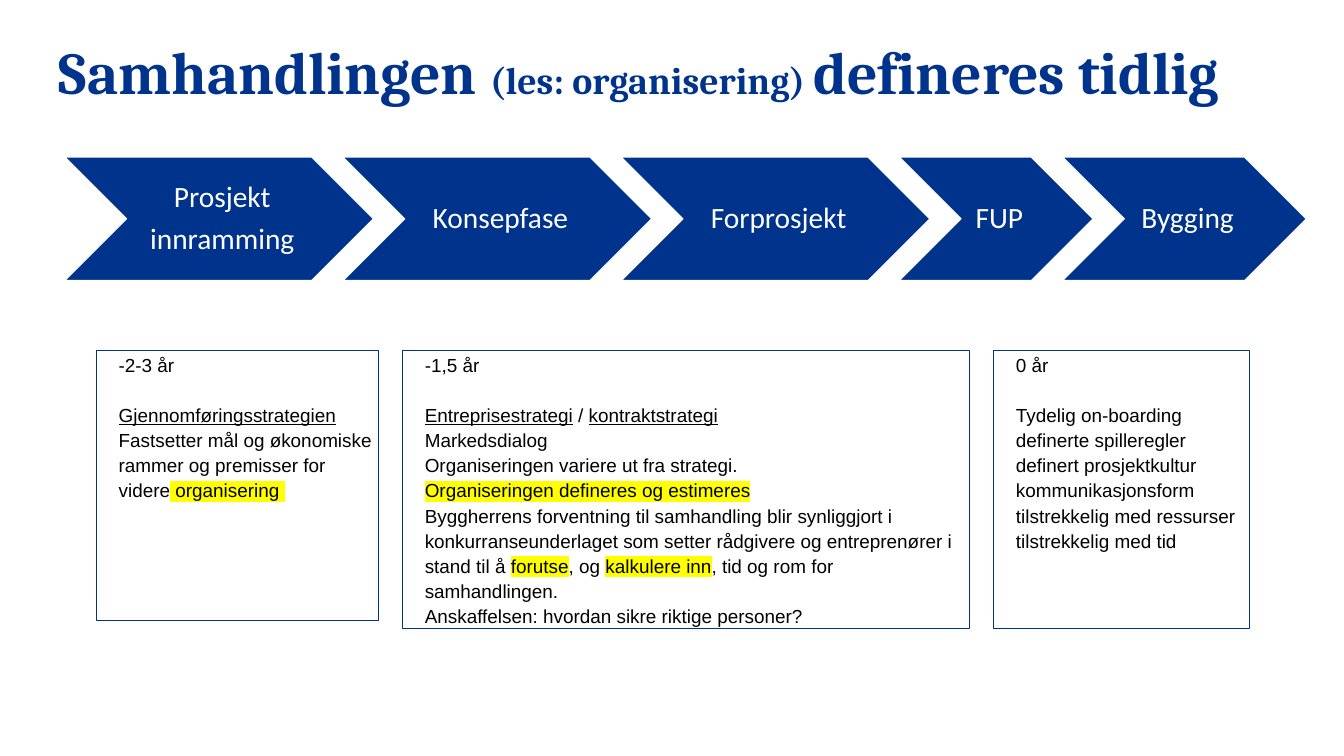
from lxml.etree import SubElement
from pptx import Presentation
from pptx.dml.color import RGBColor
from pptx.enum.shapes import MSO_SHAPE
from pptx.enum.text import MSO_ANCHOR, PP_ALIGN
from pptx.oxml.ns import qn
from pptx.util import Inches, Pt

BLUE, WHITE, BLACK, YELLOW = "00338C", "FFFFFF", "000000", "FFFF00"

TITLE = [("Samhandlingen ", 56.7), ("(les: organisering) ", 36), ("defineres tidlig", 56.7)]

# Phase label lines, chevron width
PHASES = [
    (["Prosjekt", "innramming"], 4.08),
    (["Konsepfase"], 4.08),
    (["Forprosjekt"], 4.08),
    (["FUP"], 2.56),
    (["Bygging"], 3.22),
]
PHASE_LEFT, PHASE_TOP, PHASE_HEIGHT, OVERLAP = 0.86, 2.08, 1.63, 0.4

# Left, width, height, time, paragraphs; a run is (text, style), style "u" underlined, "h" highlighted
BOX_TOP = 4.64
BOXES = [
    (1.27, 3.74, 3.57, "-2-3 år", [
        [("Gjennomføringsstrategien", "u")],
        [("Fastsetter mål og økonomiske rammer og premisser for videre", ""),
         (" organisering ", "h")],
    ]),
    (5.32, 7.5, 3.67, "-1,5 år", [
        [("Entreprisestrategi", "u"), (" / ", ""), ("kontraktstrategi", "u")],
        [("Markedsdialog", "")],
        [("Organiseringen variere ut fra strategi.", "")],
        [("Organiseringen defineres og estimeres", "h")],
        [("Byggherrens forventning til samhandling blir synliggjort i "
          "konkurranseunderlaget som setter rådgivere og entreprenører i stand til å ", ""),
         ("forutse", "h"), (", og ", ""), ("kalkulere inn", "h"),
         (", tid og rom for samhandlingen.", "")],
        [("Anskaffelsen: hvordan sikre riktige personer?", "")],
    ]),
    (13.14, 3.39, 3.67, "0 år", [
        [("Tydelig on-boarding", "")],
        [("definerte spilleregler", "")],
        [("definert prosjektkultur", "")],
        [("kommunikasjonsform", "")],
        [("tilstrekkelig med ressurser", "")],
        [("tilstrekkelig med tid", "")],
    ]),
]


def rgb(color):
    return RGBColor.from_string(color)


def set_font(p, name, size, color, bold=False):
    p.font.name, p.font.size, p.font.bold = name, Pt(size), bold
    p.font.color.rgb = rgb(color)


def set_frame(s, anchor, margins=(0, 0, 0, 0)):
    tf = s.text_frame
    tf.word_wrap = True
    tf.vertical_anchor = anchor
    tf.margin_left, tf.margin_top, tf.margin_right, tf.margin_bottom = map(Inches, margins)
    return tf


def paragraphs(tf, items):
    """Yield a paragraph of the frame for each item."""
    for i, item in enumerate(items):
        yield (tf.add_paragraph() if i else tf.paragraphs[0]), item


def add_outlined(slide, kind, box, fill, line, width):
    s = slide.shapes.add_shape(kind, *map(Inches, box))
    s.shadow.inherit = False
    if fill:
        s.fill.solid()
        s.fill.fore_color.rgb = rgb(fill)
    else:
        s.fill.background()
    s.line.color.rgb = rgb(line)
    s.line.width = Pt(width)
    return s


def add_title(slide):
    s = slide.shapes.add_textbox(Inches(0.78), Inches(0.4), Inches(15.76), Inches(1.06))
    p = set_frame(s, MSO_ANCHOR.MIDDLE).paragraphs[0]
    set_font(p, "Cambria", 56.7, BLUE, bold=True)
    for text, size in TITLE:
        r = p.add_run()
        r.text, r.font.size = text, Pt(size)


def add_phase(slide, left, width, lines):
    add_outlined(slide, MSO_SHAPE.CHEVRON, (left, PHASE_TOP, width, PHASE_HEIGHT), BLUE, WHITE, 1)
    label = (left + PHASE_HEIGHT / 2, PHASE_TOP, width - PHASE_HEIGHT, PHASE_HEIGHT)
    s = slide.shapes.add_textbox(*map(Inches, label))
    tf = set_frame(s, MSO_ANCHOR.MIDDLE, (0.12, 0.04, 0.04, 0.04))
    for p, line in paragraphs(tf, lines):
        p.text = line
        p.alignment = PP_ALIGN.CENTER
        p.line_spacing, p.space_after = 0.9, Pt(9.8)
        set_font(p, "Calibri", 28, WHITE)


def add_box(slide, left, width, height, time, body):
    s = add_outlined(slide, MSO_SHAPE.RECTANGLE, (left, BOX_TOP, width, height), None, BLUE, 0.75)
    tf = set_frame(s, MSO_ANCHOR.TOP)
    for i, (p, runs) in enumerate(paragraphs(tf, [[(time, "")]] + body)):
        p.alignment = PP_ALIGN.LEFT
        p.line_spacing = 1.11
        if i == 1:
            p.space_before = Pt(24)
        p._p.get_or_add_pPr().set("marL", str(Inches(0.3)))
        set_font(p, "Arial", 18, BLACK)
        for text, style in runs:
            r = p.add_run()
            r.text = text
            # A shape's own text style is white, so the colour is repeated on the run
            r.font.color.rgb = rgb(BLACK)
            if style == "u":
                r.font.underline = True
            elif style == "h":
                highlight = SubElement(r.font._element, qn("a:highlight"))
                SubElement(highlight, qn("a:srgbClr")).set("val", YELLOW)


def main():
    prs = Presentation()
    prs.slide_width, prs.slide_height = Inches(17.78), Inches(10)
    slide = prs.slides.add_slide(prs.slide_layouts[6])
    add_title(slide)
    left = PHASE_LEFT
    for lines, width in PHASES:
        add_phase(slide, left, width, lines)
        left += width - OVERLAP
    for box in BOXES:
        add_box(slide, *box)
    prs.save("out.pptx")


if __name__ == "__main__":
    main()
